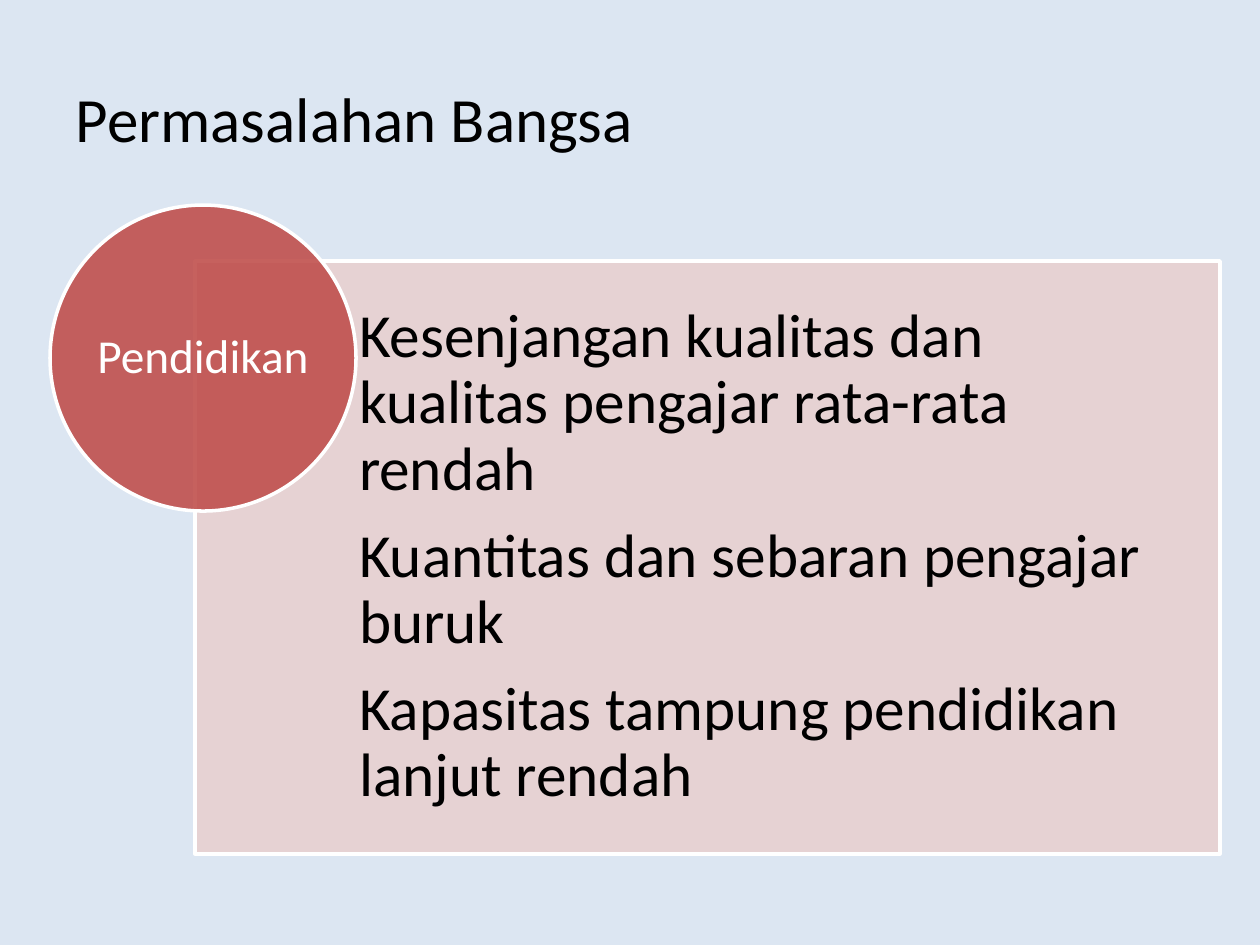
from dataclasses import dataclass

from lxml import etree
from pptx import Presentation
from pptx import util as u
from pptx.dml.color import RGBColor
from pptx.enum import shapes, text
from pptx.oxml import ns

EMU_PER_PX = 914400 / 126


@dataclass(frozen=True)
class Theme:
    font: str = "Calibri"
    backdrop: str = "DCE6F2"
    panel: str = "E8D0D0"
    badge: str = "C0504D"
    light: str = "FFFFFF"
    dark: str = "000000"
    title_size: int = 36
    body_size: int = 35
    badge_size: int = 27
    outline: int = 2
    opacity: int = 90


@dataclass(frozen=True)
class Area:
    left: int
    top: int
    width: int
    height: int

    def emu(self) -> tuple:
        return tuple(px(n) for n in (self.left, self.top, self.width, self.height))


@dataclass(frozen=True)
class Figure:
    kind: shapes.MSO_SHAPE
    area: Area
    color: str


THEME = Theme()
TITLE_AREA = Area(63, 38, 606, 158)
BODY_AREA = Area(359, 261, 861, 593)
LABEL_AREA = Area(95, 250, 216, 216)
PANEL = Figure(shapes.MSO_SHAPE.RECTANGLE, Area(195, 261, 1025, 593), THEME.panel)
BADGE = Figure(shapes.MSO_SHAPE.OVAL, Area(50, 205, 306, 306), THEME.badge)
PROBLEMS = (
    "Kesenjangan kualitas dan kualitas pengajar rata-rata rendah",
    "Kuantitas dan sebaran pengajar buruk",
    "Kapasitas tampung pendidikan lanjut rendah",
)


def px(count: int) -> u.Emu:
    return u.Emu(round(count * EMU_PER_PX))


def draw_figure(parent, figure: Figure) -> None:
    shape = parent.shapes.add_shape(figure.kind, *figure.area.emu())
    shape.shadow.inherit = False
    shape.fill.solid()
    shape.fill.fore_color.rgb = RGBColor.from_string(figure.color)
    color = shape.fill._xPr.find(ns.qn("a:solidFill"))[0]
    etree.SubElement(color, ns.qn("a:alpha")).set("val", str(THEME.opacity * 1000))
    shape.line.color.rgb = RGBColor.from_string(THEME.light)
    shape.line.width = u.Pt(THEME.outline)


def draw_text(parent, area: Area, lines: tuple, *, size: int, color: str = THEME.dark,
              align=text.PP_ALIGN.LEFT, insets: tuple = (0, 0, 0, 0),
              line_spacing: float = 0.9, after: int = 0) -> None:
    box = parent.shapes.add_textbox(*area.emu())
    frame = box.text_frame
    frame.word_wrap = True
    frame.vertical_anchor = text.MSO_ANCHOR.MIDDLE
    (frame.margin_left, frame.margin_top,
     frame.margin_right, frame.margin_bottom) = (px(n) for n in insets)
    for index, line in enumerate(lines):
        para = frame.add_paragraph() if index else frame.paragraphs[0]
        para.alignment = align
        para.line_spacing = line_spacing
        para.space_after = u.Pt(after)
        span = para.add_run()
        span.text = line
        span.font.name = THEME.font
        span.font.size = u.Pt(size)
        span.font.color.rgb = RGBColor.from_string(color)


def main() -> None:
    deck = Presentation()
    deck.slide_width, deck.slide_height = px(1260), px(945)
    page = deck.slides.add_slide(deck.slide_layouts[6])
    page.background.fill.solid()
    page.background.fill.fore_color.rgb = RGBColor.from_string(THEME.backdrop)

    draw_text(page, TITLE_AREA, ("Permasalahan Bangsa",), size=THEME.title_size,
              insets=(13, 6, 13, 6), line_spacing=1.0)
    diagram = page.shapes.add_group_shape()
    draw_figure(diagram, PANEL)
    draw_text(diagram, BODY_AREA, PROBLEMS, size=THEME.body_size,
              insets=(0, 34, 34, 34), after=12)
    draw_figure(diagram, BADGE)
    draw_text(diagram, LABEL_AREA, ("Pendidikan",), size=THEME.badge_size,
              color=THEME.light, align=text.PP_ALIGN.CENTER)
    deck.save("out.pptx")


if __name__ == "__main__":
    main()
